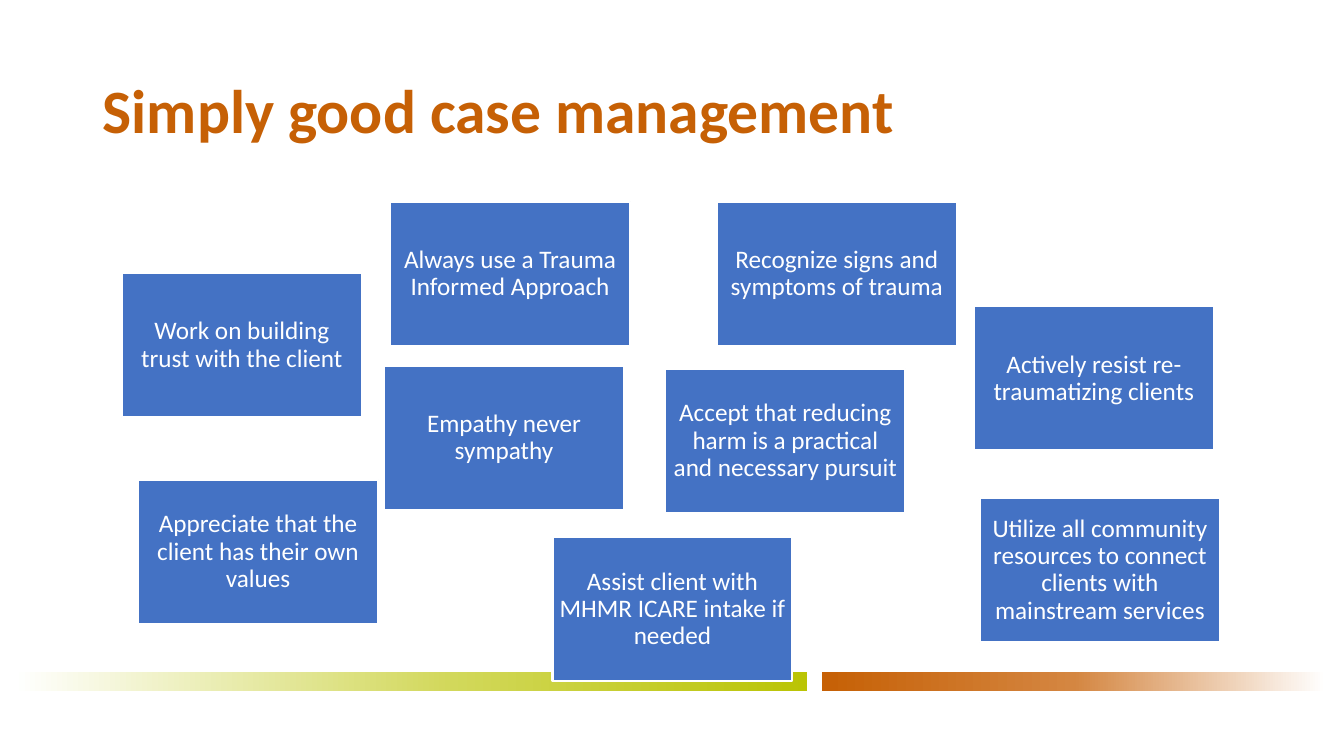
from copy import deepcopy
from dataclasses import dataclass

from pptx import Presentation
from pptx.dml.color import RGBColor as Color
from pptx.enum.shapes import MSO_SHAPE as Shape
from pptx.enum.text import MSO_ANCHOR as Anchor, PP_ALIGN as Align
from pptx.oxml.ns import qn
from pptx.util import Inches, Pt


@dataclass(frozen=True)
class Theme:
    """Colours, type sizes and font of the slide."""
    white: str = "FFFFFF"
    blue: str = "4472C4"
    orange: str = "C66005"
    light_orange: str = "D48641"
    green: str = "BAC405"
    light_green: str = "D2D85B"
    font: str = "Calibri"
    title_size: int = 44
    tile_size: int = 18


THEME = Theme()
WIDTH, HEIGHT = Inches(13.33), Inches(7.5)
TITLE_BOX = (6.9, 5.33, 86.27, 19.33)
TILE_SIZE = (17.85, 19.07)
BAR_TOP, BAR_HEIGHT = 88.93, 2.53
BARS = [
    (1.05, 58.96, [(0, THEME.white), (0.55, THEME.light_green), (1, THEME.green)]),
    (61.14, 37.51, [(0, THEME.orange), (0.5, THEME.light_orange), (1, THEME.white)]),
]
TILES = [
    (9.08, 36.13, "Work on building trust with the client"),
    (29.03, 26.67, "Always use a Trauma Informed Approach"),
    (53.34, 26.67, "Recognize signs and symptoms of trauma"),
    (72.47, 40.53, "Actively resist re-traumatizing clients"),
    (10.28, 63.47, "Appreciate that the client has their own values"),
    (28.58, 48.4, "Empathy never sympathy"),
    (49.51, 48.8, "Accept that reducing harm is a practical and necessary pursuit"),
    (72.92, 65.87, "Utilize all community resources to connect clients with mainstream services"),
    (41.11, 71.07, "Assist client with MHMR ICARE intake if needed"),
]


def to_lengths(box):
    """Turn percentages of the slide into left, top, width and height."""
    return [round(share * side / 100) for share, side in zip(box, (WIDTH, HEIGHT) * 2)]


def write_text(shape, text, size, color, align, bold=False):
    """Write one vertically centred paragraph into a shape."""
    frame = shape.text_frame
    frame.text = text
    frame.word_wrap = True
    frame.vertical_anchor = Anchor.MIDDLE
    paragraph = frame.paragraphs[0]
    paragraph.alignment = align
    paragraph.line_spacing = 0.9
    font = paragraph.runs[0].font
    font.name, font.size, font.bold = THEME.font, Pt(size), bold
    font.color.rgb = Color.from_string(color)


def add_title(slide, box, text):
    """Place and format the slide title."""
    title = slide.shapes.title
    title.left, title.top, title.width, title.height = to_lengths(box)
    write_text(title, text, THEME.title_size, THEME.orange, Align.LEFT, bold=True)


def add_rectangle(slide, box):
    """Add a rectangle without shadow."""
    shape = slide.shapes.add_shape(Shape.RECTANGLE, *to_lengths(box))
    shape.shadow.inherit = False
    return shape


def add_bar(slide, box, stops):
    """Add a bar with a three-stop gradient running left to right."""
    bar = add_rectangle(slide, box)
    bar.line.fill.background()
    bar.fill.gradient()
    bar.fill.gradient_angle = 0
    first = next(bar.element.iter(qn("a:gs")))
    first.addnext(deepcopy(first))
    for stop, (position, color) in zip(bar.fill.gradient_stops, stops):
        stop.position = position
        stop.color.rgb = Color.from_string(color)


def add_tile(slide, box, text):
    """Add a blue tile holding one piece of advice."""
    tile = add_rectangle(slide, box)
    tile.fill.solid()
    tile.fill.fore_color.rgb = Color.from_string(THEME.blue)
    tile.line.color.rgb = Color.from_string(THEME.white)
    tile.line.width = Pt(1.5)
    frame = tile.text_frame
    frame.margin_left = frame.margin_right = Inches(0.07)
    frame.margin_top = frame.margin_bottom = Inches(0.07)
    write_text(tile, text, THEME.tile_size, THEME.white, Align.CENTER)


def main():
    """Build the slide and save it."""
    presentation = Presentation()
    presentation.slide_width, presentation.slide_height = WIDTH, HEIGHT
    slide = presentation.slides.add_slide(presentation.slide_layouts.get_by_name("Title Only"))
    add_title(slide, TITLE_BOX, "Simply good case management")
    for left, width, stops in BARS:
        add_bar(slide, (left, BAR_TOP, width, BAR_HEIGHT), stops)
    for left, top, text in TILES:
        add_tile(slide, (left, top, *TILE_SIZE), text)
    presentation.save("out.pptx")


if __name__ == "__main__":
    main()
